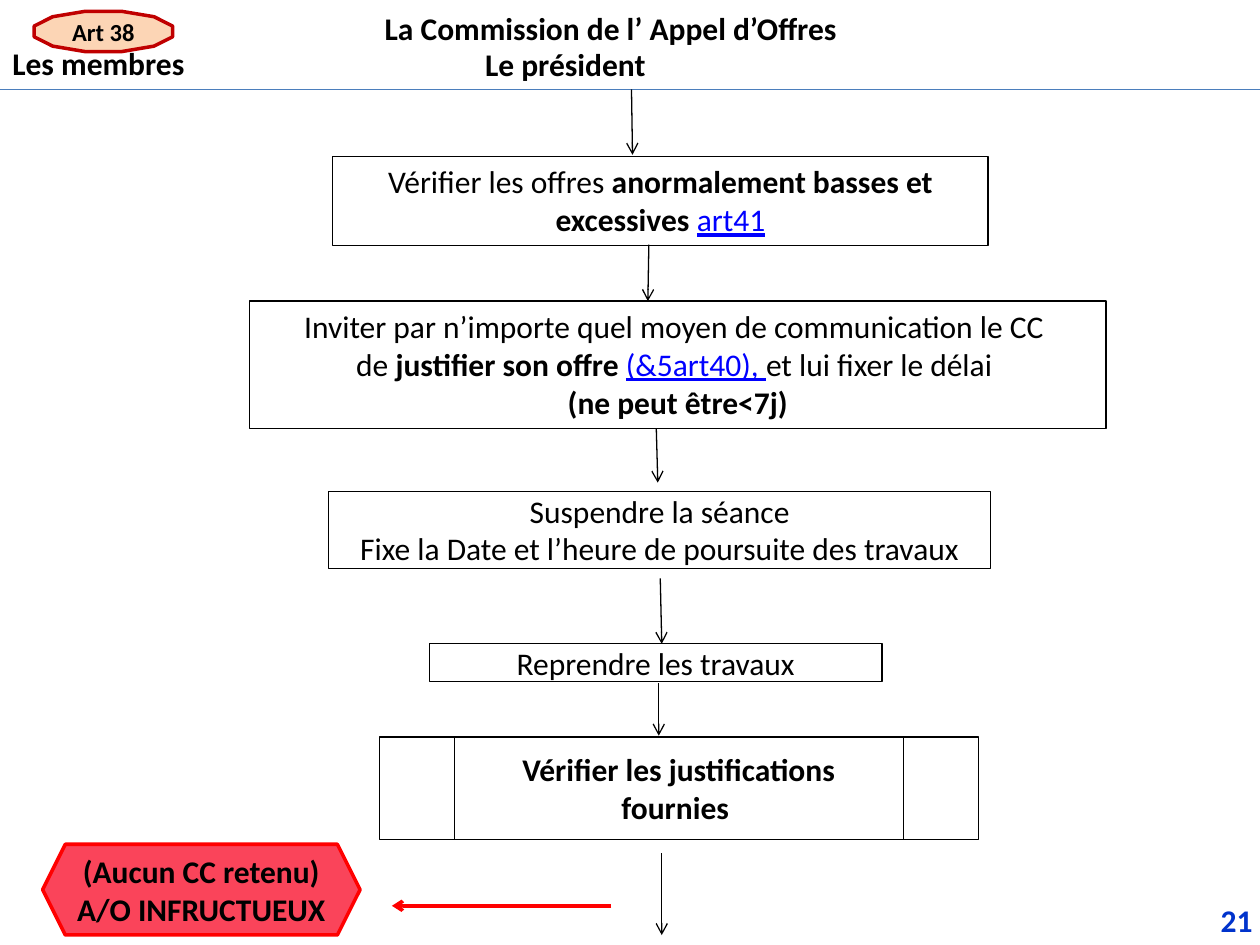
from dataclasses import dataclass
from typing import NamedTuple, Optional

from lxml import etree
from pptx import Presentation
from pptx import util as u
from pptx.dml.color import RGBColor
from pptx.enum import shapes as sh
from pptx.enum import text as tx
from pptx.oxml.ns import qn


@dataclass(frozen=True)
class Theme:
    font: str = "Calibri"
    size: int = 18
    small: int = 14
    thin: float = 0.75
    thick: float = 2
    black: str = "000000"
    rule: str = "4B7EBC"
    link: str = "0000FF"
    page: str = "0033CC"
    peach: str = "FCD5B5"
    maroon: str = "C00000"
    rose: str = "FA445A"
    red: str = "FF0000"


T = Theme()
KIND = sh.MSO_SHAPE
ALIGN = tx.PP_ALIGN


class Bit(NamedTuple):
    text: str
    bold: bool = False
    color: str = T.black
    line: bool = False


class Area(NamedTuple):
    left: float
    top: float
    width: float
    height: float


@dataclass
class Label:
    area: Area
    bit: Bit
    align: Optional[ALIGN] = None
    middle: bool = False


@dataclass
class Box:
    area: Area
    paras: list
    kind: KIND = KIND.RECTANGLE
    fill: Optional[str] = None
    edge: str = T.black
    weight: float = T.thin
    size: int = T.size
    tight: bool = False
    middle: bool = False


class Arrow(NamedTuple):
    x1: float
    y1: float
    x2: float
    y2: float
    color: str = T.black
    weight: float = T.thin
    head: bool = True


def write(frame, paras: list, align, size: int, middle: bool) -> None:
    frame.word_wrap = True
    frame.vertical_anchor = tx.MSO_ANCHOR.MIDDLE if middle else tx.MSO_ANCHOR.TOP
    if not middle:
        frame.auto_size = tx.MSO_AUTO_SIZE.SHAPE_TO_FIT_TEXT
    for i, bits in enumerate(paras):
        para = frame.add_paragraph() if i else frame.paragraphs[0]
        para.alignment = align
        for bit in bits:
            run = para.add_run()
            run.text = bit.text
            font = run.font
            font.name, font.size, font.bold = T.font, u.Pt(size), bit.bold
            font.underline = bit.line
            font.color.rgb = RGBColor.from_string(bit.color)


def add_label(slide, label: Label) -> None:
    box = slide.shapes.add_textbox(*map(u.Cm, label.area))
    write(box.text_frame, [[label.bit]], label.align, T.size, label.middle)


def add_box(slide, box: Box) -> None:
    shape = slide.shapes.add_shape(box.kind, *map(u.Cm, box.area))
    shape.shadow.inherit = False
    if box.fill:
        shape.fill.solid()
        shape.fill.fore_color.rgb = RGBColor.from_string(box.fill)
    else:
        shape.fill.background()
    shape.line.color.rgb = RGBColor.from_string(box.edge)
    shape.line.width = u.Pt(box.weight)
    frame = shape.text_frame
    if box.tight:
        frame.margin_left = frame.margin_right = 0
        frame.margin_top = frame.margin_bottom = 0
    write(frame, box.paras, ALIGN.CENTER, box.size, box.middle)


def add_arrow(slide, arrow: Arrow) -> None:
    ends = map(u.Cm, arrow[:4])
    line = slide.shapes.add_connector(sh.MSO_CONNECTOR.STRAIGHT, *ends)
    line.line.color.rgb = RGBColor.from_string(arrow.color)
    line.line.width = u.Pt(arrow.weight)
    if arrow.head:
        etree.SubElement(line.line._get_or_add_ln(), qn("a:tailEnd"), type="arrow")
    etree.SubElement(line._element.spPr, qn("a:effectLst"))


# Header and page number
LABELS = [
    Label(Area(5.38, 0.05, 13.87, 1.02),
          Bit("La Commission de l’ Appel d’Offres", True), ALIGN.CENTER),
    Label(Area(0, 0.76, 4.9, 1.02), Bit("Les membres", True)),
    Label(Area(9.53, 0.79, 4.34, 1.02), Bit("Le président", True)),
    Label(Area(24.18, 18.03, 1.32, 1.02), Bit("21", True, T.page),
          ALIGN.RIGHT, True),
]

# Article badge, steps from top to bottom, outcome
BOXES = [
    Box(Area(0.69, 0.23, 2.79, 0.81), [[Bit("Art 38", True)]],
        KIND.DODECAGON, T.peach, T.maroon, T.thick, T.small, middle=True),
    Box(Area(6.71, 3.15, 13.21, 1.8),
        [[Bit("Vérifier les offres "),
          Bit("anormalement basses et excessives ", True),
          Bit("art41", color=T.link, line=True)]]),
    Box(Area(5.03, 6.07, 17.27, 2.57),
        [[Bit("Inviter par n’importe quel moyen de communication le CC ")],
         [Bit("de "), Bit("justifier son offre ", True),
          Bit("(&5art40), ", color=T.link, line=True),
          Bit("et lui fixer le délai ")],
         [Bit("(ne peut être<7j)", True)]]),
    Box(Area(6.63, 9.91, 13.34, 1.55),
        [[Bit("Suspendre la séance")],
         [Bit("Fixe la Date et l’heure de poursuite des travaux")]], tight=True),
    Box(Area(8.66, 12.98, 9.12, 0.76), [[Bit("Reprendre les travaux")]], tight=True),
    Box(Area(7.65, 14.86, 12.07, 2.06),
        [[Bit("Vérifier les justifications fournies ", True)]],
        KIND.FLOWCHART_PREDEFINED_PROCESS, middle=True),
    Box(Area(0.86, 17.02, 6.4, 1.83),
        [[Bit("(Aucun CC retenu) A/O INFRUCTUEUX", True)]],
        KIND.HEXAGON, T.rose, T.red, T.thick, tight=True, middle=True),
]

# Header rule, then the flow
ARROWS = [
    Arrow(-0.25, 1.8, 25.45, 1.8, T.rule, head=False),
    Arrow(12.73, 1.8, 12.75, 3.12),
    Arrow(13.08, 4.93, 13.06, 6.07),
    Arrow(13.23, 8.64, 13.26, 9.73),
    Arrow(13.31, 11.66, 13.34, 12.98),
    Arrow(13.28, 13.77, 13.28, 14.83),
    Arrow(13.34, 17.2, 13.34, 18.85),
    Arrow(12.32, 18.26, 7.9, 18.26, T.red, T.thick),
]


def main() -> None:
    deck = Presentation()
    deck.slide_width, deck.slide_height = u.Cm(25.4), u.Cm(19.05)
    slide = deck.slides.add_slide(deck.slide_layouts[6])
    for label in LABELS:
        add_label(slide, label)
    for box in BOXES:
        add_box(slide, box)
    for arrow in ARROWS:
        add_arrow(slide, arrow)
    deck.save("out.pptx")


if __name__ == "__main__":
    main()
